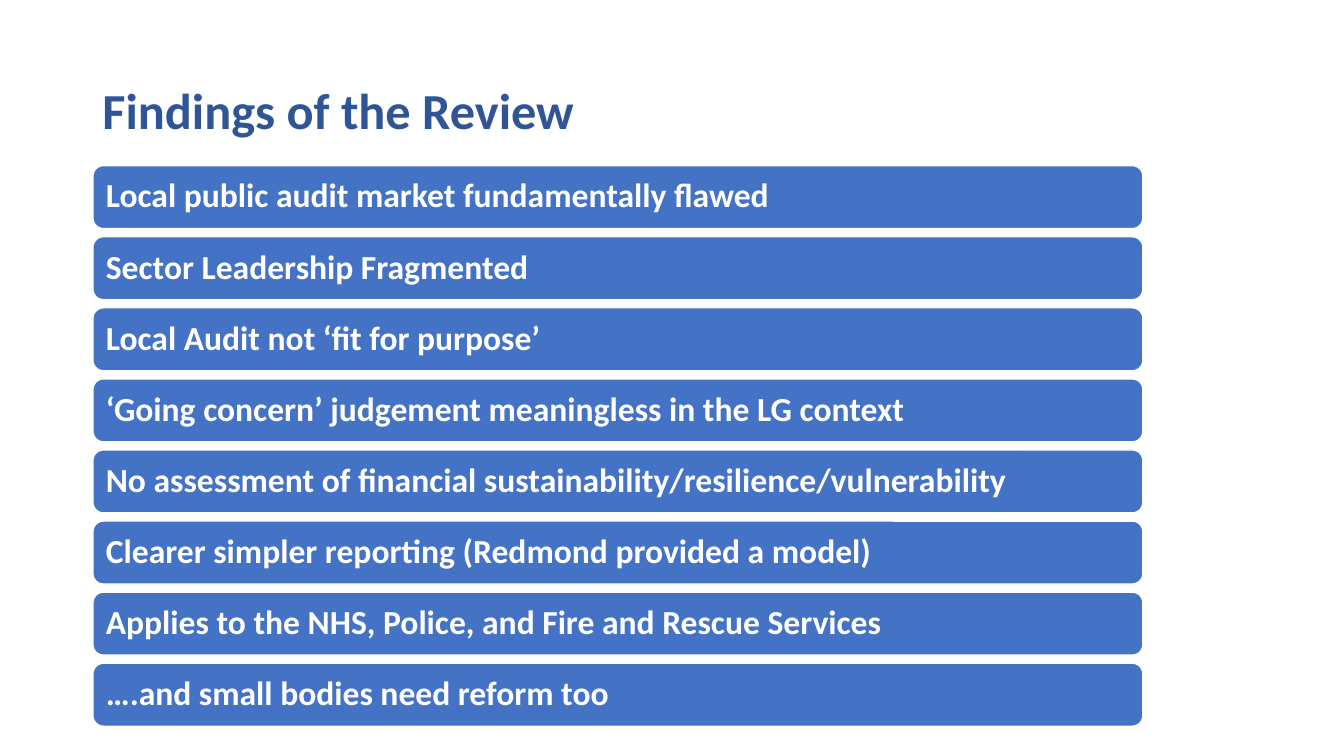
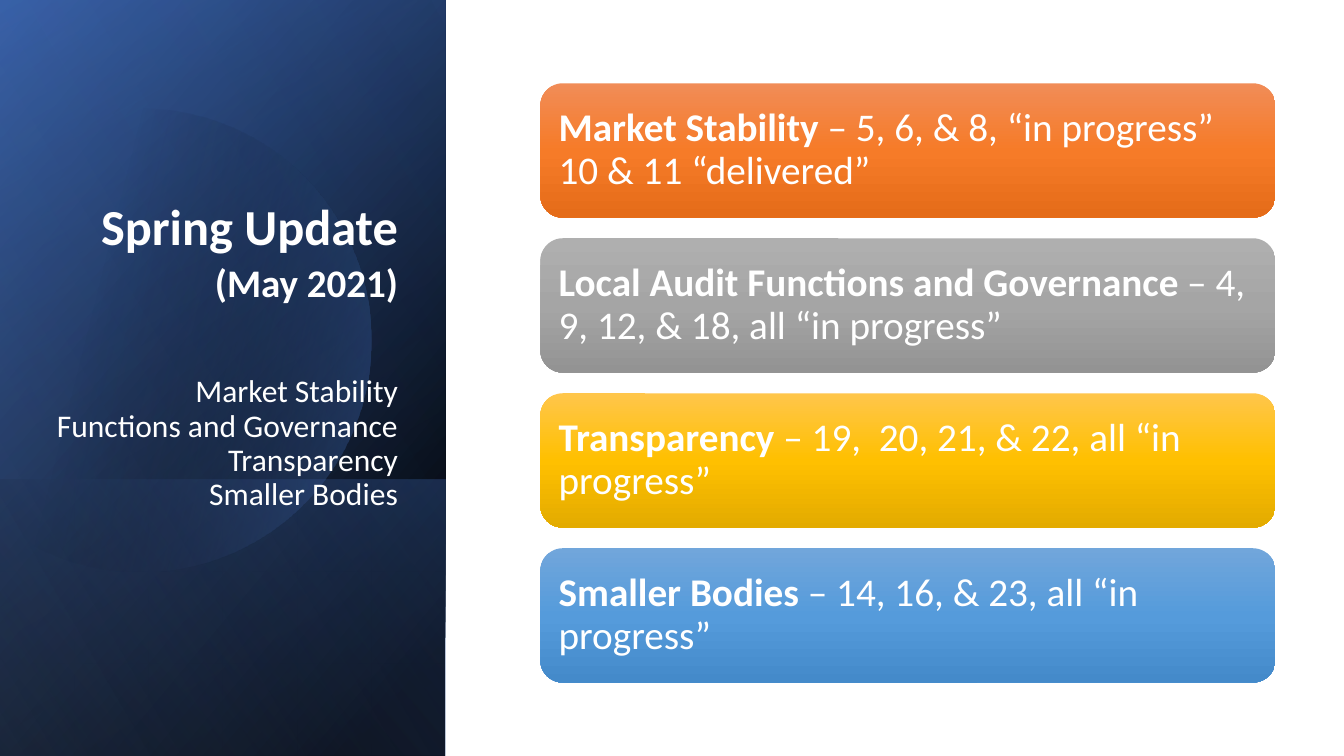
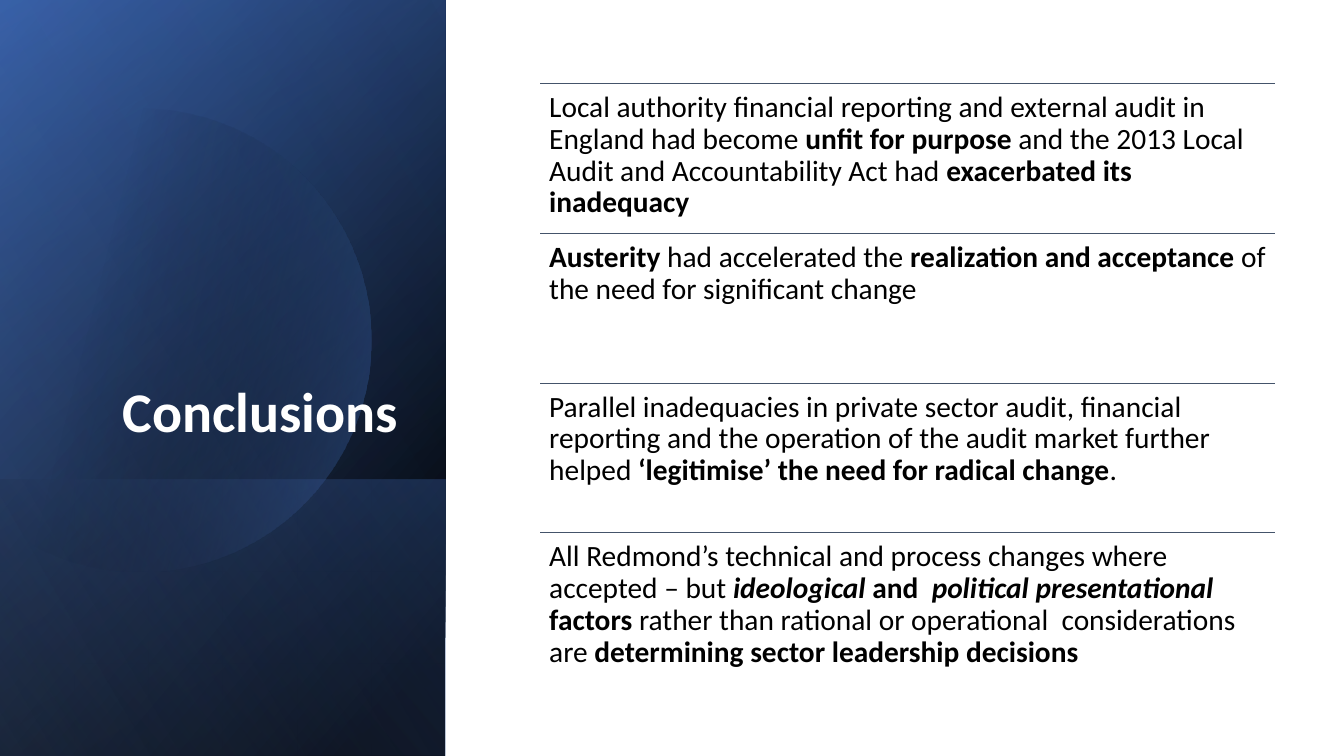
from math import acos, cos, pi, sin

from lxml.etree import SubElement
from pptx import Presentation
from pptx.dml.color import RGBColor
from pptx.enum.shapes import MSO_CONNECTOR, MSO_SHAPE
from pptx.enum.text import MSO_ANCHOR, MSO_AUTO_SIZE, PP_ALIGN
from pptx.oxml.ns import qn
from pptx.util import Pt

FONT = "Calibri"
WHITE, BLACK, NAVY, BLUE, SLATE = "FFFFFF", "000000", "2F5597", "4472C4", "44546A"
PANEL = (0, 0, 318.2, 540)
CONTENT = (386, 59.5, 525, 428)

FINDINGS = [
    "Local public audit market fundamentally flawed",
    "Sector Leadership Fragmented",
    "Local Audit not ‘fit for purpose’",
    "‘Going concern’ judgement meaningless in the LG context",
    "No assessment of financial sustainability/resilience/vulnerability",
    "Clearer simpler reporting (Redmond provided a model)",
    "Applies to the NHS, Police, and Fire and Rescue Services",
    "….and small bodies need reform too",
]
UPDATES = [
    ("Market Stability ", "– 5, 6, & 8, “in progress” 10 & 11 “delivered”",
     ("F18C57", "F67B28", "E56C19")),
    ("Local Audit Functions and Governance ", "– 4, 9, 12, & 18, all “in progress”",
     ("AFAFAF", "A5A5A5", "939393")),
    ("Transparency ", "– 19,  20, 21, & 22, all “in progress”",
     ("FFC64B", "FFC000", "E3AB00")),
    ("Smaller Bodies ", "– 14, 16, & 23, all “in progress”",
     ("71A6DB", "559BDB", "448ACA")),
]
CONCLUSIONS = [
    [("Local authority financial reporting and external audit in England had become ", ""),
     ("unfit for purpose ", "b"),
     ("and the 2013 Local Audit and Accountability Act had ", ""),
     ("exacerbated its inadequacy", "b")],
    [("Austerity", "b"), (" had accelerated the ", ""),
     ("realization and acceptance ", "b"), ("of the need for significant change", "")],
    [("Parallel inadequacies in private sector audit, financial reporting and the "
      "operation of the audit market further helped ", ""),
     ("‘legitimise’ the need for radical change", "b"), (".", "")],
    [("All Redmond’s technical and process changes where accepted – but ", ""),
     ("ideological", "bi"), (" and  ", "b"), ("political presentational", "bi"),
     (" factors ", "b"), ("rather than rational or operational  considerations are ", ""),
     ("determining sector leadership decisions", "b")],
]
SPRING_TITLE = [
    ("Spring Update", 36, True, 0),
    ("(May 2021)", 27.9, True, 5),
    ("Market Stability", 22.5, False, 50),
    ("Functions and Governance", 22.5, False, 0),
    ("Transparency", 22.5, False, 0),
    ("Smaller Bodies", 22.5, False, 0),
]


def rgb(value):
    """Turn a hex string into a colour."""
    return RGBColor.from_string(value)


def points(box):
    """Turn a box of numbers into lengths in points."""
    return [Pt(value) for value in box]


def fill_gradient(shape, stops, angle):
    """Fill a shape with (position, colour, opacity) stops and remove its outline."""
    shape.shadow.inherit = False
    shape.line.fill.background()
    shape.fill.background()
    properties = shape.element.spPr
    empty_fill = properties.find(qn("a:noFill"))
    gradient = properties.makeelement(qn("a:gradFill"), {"rotWithShape": "1"})
    stop_list = SubElement(gradient, qn("a:gsLst"))
    for position, colour, opacity in stops:
        stop = SubElement(stop_list, qn("a:gs"), pos=str(position * 1000))
        colour_element = SubElement(stop, qn("a:srgbClr"), val=colour)
        if opacity < 100:
            SubElement(colour_element, qn("a:alpha"), val=str(opacity * 1000))
    SubElement(gradient, qn("a:lin"), ang=str(angle * 60000), scaled="0")
    properties.replace(empty_fill, gradient)


def format_paragraph(paragraph, size, colour, bold=None, align=PP_ALIGN.LEFT):
    """Apply the shared text style to a paragraph."""
    paragraph.alignment = align
    paragraph.line_spacing = 0.9
    font = paragraph.font
    font.name, font.size, font.bold = FONT, Pt(size), bold
    font.color.rgb = rgb(colour)


def write_runs(paragraph, runs):
    """Write (text, style) runs, where style may hold b and i."""
    for text, style in runs:
        run = paragraph.add_run()
        run.text = text
        run.font.bold = "b" in style
        run.font.italic = "i" in style


def set_frame(text_frame, inset, anchor):
    """Set wrapping, equal insets and the anchor of a text frame."""
    text_frame.word_wrap = True
    text_frame.vertical_anchor = anchor
    text_frame.margin_left = text_frame.margin_right = Pt(inset)
    text_frame.margin_top = text_frame.margin_bottom = Pt(inset)


def split_rows(box, count, gap):
    """Split a box into equal rows with equal gaps."""
    left, top, width, height = box
    row_height = (height - gap * (count - 1)) / count
    return [(left, top + index * (row_height + gap), width, row_height)
            for index in range(count)]


def add_title(slide, box, lines, colour, anchor, align):
    """Place the title above other shapes with (text, size, bold, space before) lines."""
    title = slide.shapes.title
    title.left, title.top, title.width, title.height = points(box)
    title.element.getparent().append(title.element)
    text_frame = title.text_frame
    text_frame.auto_size = MSO_AUTO_SIZE.NONE
    text_frame.vertical_anchor = anchor
    for index, (text, size, bold, space) in enumerate(lines):
        paragraph = text_frame.add_paragraph() if index else text_frame.paragraphs[0]
        paragraph.text = text
        paragraph.space_before = Pt(space)
        format_paragraph(paragraph, size, colour, bold, align)


def add_bar(slide, box, runs, size, inset):
    """Add a rounded bar with white text and return it."""
    bar = slide.shapes.add_shape(MSO_SHAPE.ROUNDED_RECTANGLE, *points(box))
    bar.shadow.inherit = False
    set_frame(bar.text_frame, inset, MSO_ANCHOR.MIDDLE)
    paragraph = bar.text_frame.paragraphs[0]
    format_paragraph(paragraph, size, WHITE)
    write_runs(paragraph, runs)
    return bar


def add_panel_layer(slide, box, stops, angle):
    """Cover a box with a mirrored rectangle turned by a quarter."""
    left, top, width, height = box
    shift = (width - height) / 2
    layer = slide.shapes.add_shape(
        MSO_SHAPE.RECTANGLE, *points((left + shift, top - shift, height, width)))
    layer.rotation = 90
    layer.element.spPr.xfrm.set("flipH", "1")
    fill_gradient(layer, stops, angle)


def add_panel_disc(slide, box):
    """Add the translucent disc cut off by the left edge of the panel."""
    left, top, width, height = box
    center_x, center_y = left + 0.315 * width, top + 0.45 * height
    radius = 0.52 * width
    limit = acos((left - center_x) / radius)
    steps = 120
    angles = [limit * (2 * step / steps - 1) for step in range(steps + 1)]
    outline = [(Pt(center_x + radius * cos(angle)), Pt(center_y + radius * sin(angle)))
               for angle in angles]
    builder = slide.shapes.build_freeform(*outline[0])
    builder.add_line_segments(outline[1:], close=True)
    fill_gradient(builder.convert_to_shape(), [(29, BLACK, 0), (100, BLUE, 43)], 14)


def add_panel(slide, box):
    """Build the dark side panel from its gradient layers."""
    left, top, width, height = box
    band_height = 197.3
    band = (left, top + height - band_height, width, band_height)
    add_panel_layer(slide, box, [(8, BLACK, 100), (100, NAVY, 100)], 50)
    add_panel_layer(slide, box, [(0, BLACK, 0), (99, BLUE, 46)], 30)
    add_panel_layer(slide, band, [(2, BLUE, 29), (100, BLACK, 30)], 130)
    add_panel_disc(slide, box)
    add_panel_layer(slide, box, [(0, BLACK, 0), (99, "8FAADC", 11)], 120)


def add_findings(slide, box):
    """Stack the findings as blue bars."""
    for row, finding in zip(split_rows(box, len(FINDINGS), 5.8), FINDINGS):
        bar = add_bar(slide, row, [(finding, "b")], 24, 7.2)
        bar.fill.solid()
        bar.fill.fore_color.rgb = rgb(BLUE)
        bar.line.color.rgb = rgb(WHITE)
        bar.line.width = Pt(1)


def add_updates(slide, box):
    """Stack the progress updates as gradient bars."""
    for row, (topic, status, colours) in zip(split_rows(box, len(UPDATES), 14.8), UPDATES):
        bar = add_bar(slide, row, [(topic, "b"), (status, "")], 28, 8.4)
        stops = [(index * 50, colour, 100) for index, colour in enumerate(colours)]
        fill_gradient(bar, stops, 90)


def add_conclusions(slide, box):
    """List the conclusions, each under a thin rule."""
    for row, runs in zip(split_rows(box, len(CONCLUSIONS), 0), CONCLUSIONS):
        left, top, width, height = row
        rule = slide.shapes.add_connector(
            MSO_CONNECTOR.STRAIGHT, *points((left, top, left + width, top)))
        rule.line.color.rgb = rgb(SLATE)
        rule.line.width = Pt(0.5)
        SubElement(rule.element.spPr, qn("a:effectLst"))
        text_box = slide.shapes.add_textbox(*points(row))
        set_frame(text_box.text_frame, 6.3, MSO_ANCHOR.TOP)
        paragraph = text_box.text_frame.paragraphs[0]
        format_paragraph(paragraph, 21, BLACK)
        write_runs(paragraph, runs)


def main():
    """Build the three slides and save them."""
    presentation = Presentation()
    presentation.slide_width, presentation.slide_height = Pt(960), Pt(540)
    title_only = presentation.slide_layouts[5]
    findings, updates, conclusions = [
        presentation.slides.add_slide(title_only) for _ in range(3)]

    add_title(findings, (66, 28.8, 828, 104.4), [("Findings of the Review", 36, True, 0)],
              NAVY, MSO_ANCHOR.MIDDLE, PP_ALIGN.LEFT)
    add_findings(findings, (66.4, 118.3, 750, 400.4))

    add_panel(updates, PANEL)
    add_title(updates, (19.4, 132.5, 272.2, 236.8), SPRING_TITLE,
              WHITE, MSO_ANCHOR.BOTTOM, PP_ALIGN.RIGHT)
    add_updates(updates, CONTENT)

    add_panel(conclusions, PANEL)
    add_title(conclusions, (46, 132.5, 245.6, 188.6), [("Conclusions", 40, True, 0)],
              WHITE, MSO_ANCHOR.BOTTOM, PP_ALIGN.RIGHT)
    add_conclusions(conclusions, CONTENT)

    presentation.save("out.pptx")


if __name__ == "__main__":
    main()
